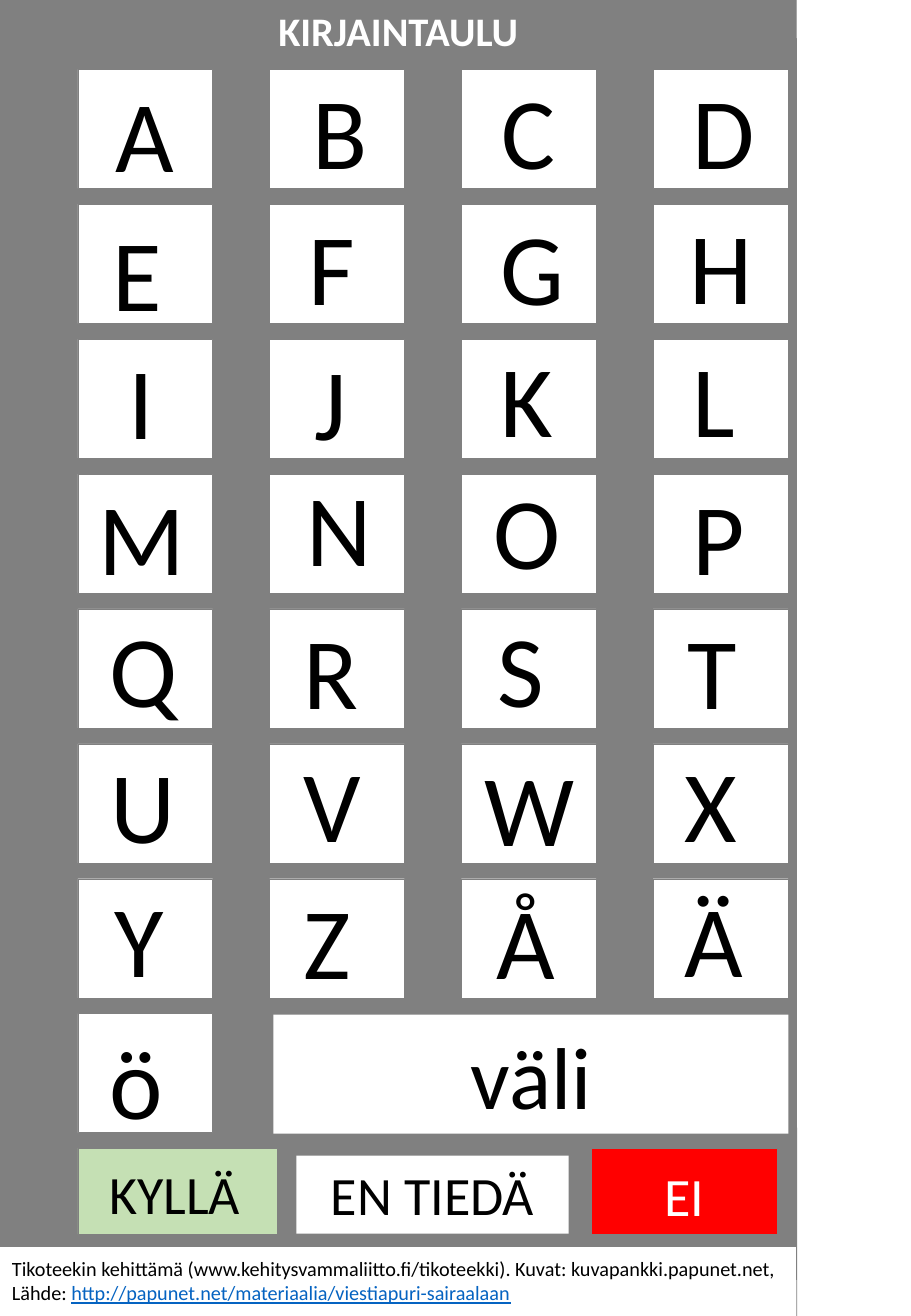
"""Build a Finnish letter board with answer keys and a source line."""
import lxml.etree
import pptx
import pptx.dml.color
import pptx.enum.shapes
import pptx.enum.text
import pptx.oxml.ns
import pptx.util

Cm = pptx.util.Cm
Pt = pptx.util.Pt
color = pptx.dml.color.RGBColor.from_string
CENTER = pptx.enum.text.PP_ALIGN.CENTER
LEFT = pptx.enum.text.PP_ALIGN.LEFT
GREY, WHITE, BLACK = "808080", "FFFFFF", "000000"

presentation = pptx.Presentation()
presentation.slide_width = Cm(19.05)
presentation.slide_height = Cm(27.51)
slide = presentation.slides.add_slide(presentation.slide_layouts[6])


def add_box(left, top, width, height, fill, line_width=0):
    shape = slide.shapes.add_shape(
        pptx.enum.shapes.MSO_SHAPE.RECTANGLE, Cm(left), Cm(top), Cm(width), Cm(height))
    shape.shadow.inherit = False
    shape.fill.solid()
    shape.fill.fore_color.rgb = color(fill)
    if line_width:
        shape.line.color.rgb = color(GREY)
        shape.line.width = Pt(line_width)
    else:
        shape.line.fill.background()
    return shape


def add_text(left, top, width, height, runs, size, alignment=CENTER, bold=False):
    shape = slide.shapes.add_textbox(Cm(left), Cm(top), Cm(width), Cm(height))
    shape.text_frame.word_wrap = True
    paragraph = shape.text_frame.paragraphs[0]
    paragraph.alignment = alignment
    for text, text_color, underline in runs:
        run = paragraph.add_run()
        run.text = text
        run.font.name = "Calibri"
        run.font.size = Pt(size)
        run.font.bold = bold
        run.font.underline = underline
        run.font.color.rgb = color(text_color)
    return shape


add_box(0, 0.81, 16.66, 25.25, GREY, 1)
add_box(0, 0, 16.66, 1.27, GREY)
title = add_text(0, 0, 16.66, 1.27, [("KIRJAINTAULU", WHITE, False)], 24, bold=True)
title.text_frame.vertical_anchor = pptx.enum.text.MSO_ANCHOR.MIDDLE

LETTER_OFFSETS = [
    ("A", 0.53, -0.08), ("B", 0.64, -0.15), ("C", 0.58, -0.15), ("D", 0.58, -0.15),
    ("E", 0.48, 0), ("F", 0.56, -0.13), ("G", 0.56, -0.13), ("H", 0.51, -0.15),
    ("I", 0.81, -0.15), ("J", 0.69, -0.13), ("K", 0.56, -0.18), ("L", 0.58, -0.18),
    ("M", 0.18, -0.13), ("N", 0.51, -0.3), ("O", 0.43, -0.25), ("P", 0.58, -0.13),
    ("Q", 0.41, -0.18), ("R", 0.46, -0.13), ("S", 0.51, -0.18), ("T", 0.46, -0.13),
    ("U", 0.43, -0.15), ("V", 0.46, -0.18), ("W", 0.23, -0.1), ("X", 0.41, -0.18),
    ("Y", 0.51, -0.18), ("Z", 0.46, -0.13), ("Å", 0.48, -0.13), ("Ä", 0.41, -0.18),
    ("ö", 0.41, -0.03),
]
for index, (letter, offset_left, offset_top) in enumerate(LETTER_OFFSETS):
    row, column = divmod(index, 4)
    left = 1.63 + column * 4.01
    top = 1.45 + row * 2.82
    add_box(left, top, 2.82, 2.49, WHITE, 0.25)
    add_text(left + offset_left, top + offset_top, 1.96, 2.82,
             [(letter, BLACK, False)], 60, LEFT)

space_key = add_box(5.72, 21.21, 10.77, 2.49, WHITE)
space_label = add_text(5.72, 21.21, 10.77, 2.49, [("väli", BLACK, False)], 52)
space_label.text_frame.vertical_anchor = pptx.enum.text.MSO_ANCHOR.MIDDLE

ANSWERS = [
    ("KYLLÄ", 1.63, 24, 4.17, 1.8, "C5E0B4", BLACK, 0.25, 1.65, 24.13, 4.01),
    ("EI", 12.37, 24, 3.89, 1.8, "FF0000", WHITE, 0.25, 12.42, 24.18, 3.78),
    ("EN TIEDÄ", 6.2, 24.16, 5.69, 1.63, WHITE, BLACK, 0, 6.2, 24.16, 5.69),
]
for (answer, left, top, width, height, fill, text_color, line_width,
     label_left, label_top, label_width) in ANSWERS:
    add_box(left, top, width, height, fill, line_width)
    add_text(label_left, label_top, label_width, 1.63, [(answer, text_color, False)], 32)

edge = slide.shapes.add_connector(
    pptx.enum.shapes.MSO_CONNECTOR.STRAIGHT, Cm(16.64), Cm(0), Cm(16.66), Cm(27.51))
edge.line.color.rgb = color(GREY)
edge.line.width = Pt(0.5)
lxml.etree.SubElement(edge._element.spPr, pptx.oxml.ns.qn("a:effectLst"))

add_text(0, 26.14, 16.74, 1.27, [
    ("Tikoteekin kehittämä (www.kehitysvammaliitto.fi/tikoteekki). "
     "Kuvat: kuvapankki.papunet.net, Lähde: ", BLACK, False),
    ("http://papunet.net/materiaalia/viestiapuri-sairaalaan", "0563C1", True),
], 12, LEFT)

presentation.save("out.pptx")
